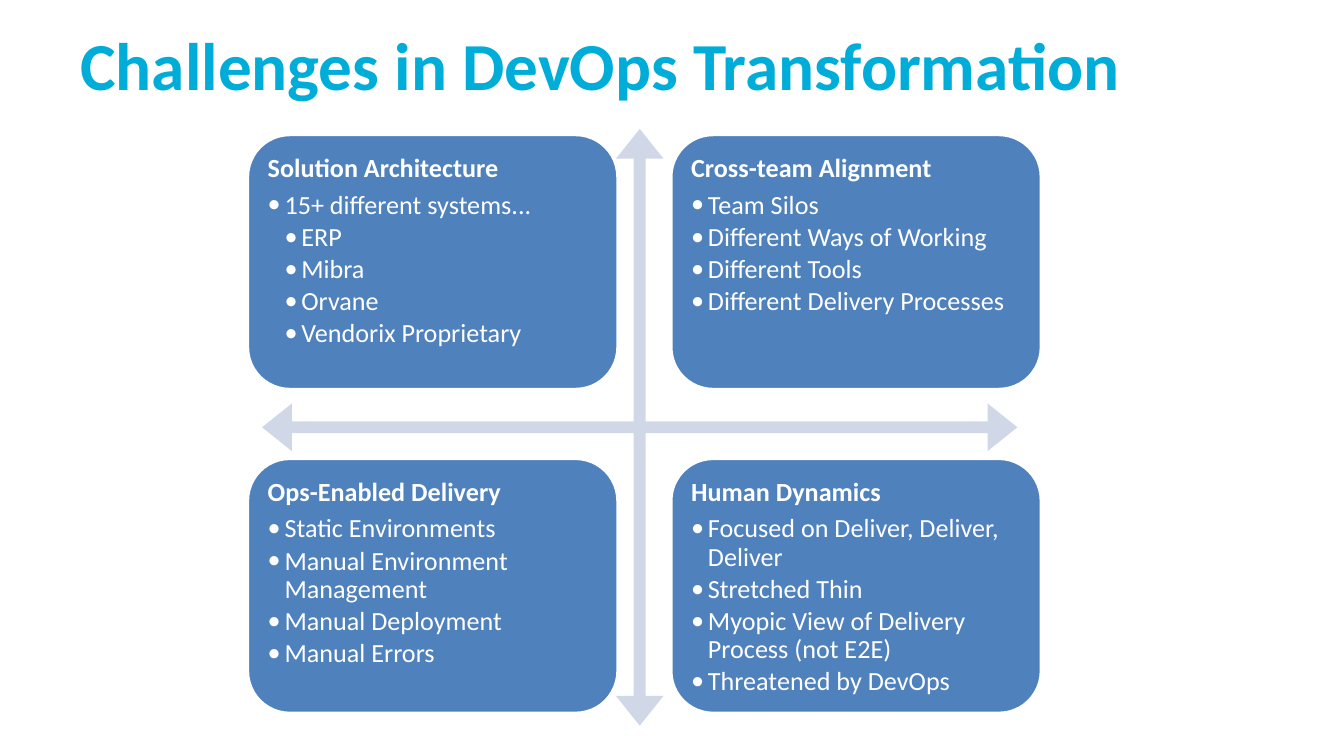
from lxml import etree
from pptx import Presentation
from pptx.dml.color import RGBColor
from pptx.enum.shapes import MSO_SHAPE as Shape
from pptx.enum.text import MSO_ANCHOR as Anchor, PP_ALIGN as Align
from pptx.oxml.ns import qn
from pptx.util import Inches, Pt

CYAN = RGBColor(0x00, 0xAD, 0xD8)
BLUE = RGBColor(0x4F, 0x81, 0xBD)
PALE_BLUE = RGBColor(0xD0, 0xD8, 0xE8)
WHITE = RGBColor(0xFF, 0xFF, 0xFF)
FONT = "Calibri"
INDENT = 0.125

# Heading and (level, text) bullets of each quadrant, row by row
QUADRANTS = [
    ("Solution Architecture", [
        (1, "15+ different systems..."),
        (2, "ERP"),
        (2, "Mibra"),
        (2, "Orvane"),
        (2, "Vendorix Proprietary"),
    ]),
    ("Cross-team Alignment", [
        (1, "Team Silos"),
        (1, "Different Ways of Working"),
        (1, "Different Tools"),
        (1, "Different Delivery Processes"),
    ]),
    ("Ops-Enabled Delivery", [
        (1, "Static Environments"),
        (1, "Manual Environment Management"),
        (1, "Manual Deployment"),
        (1, "Manual Errors"),
    ]),
    ("Human Dynamics", [
        (1, "Focused on Deliver, Deliver, Deliver"),
        (1, "Stretched Thin"),
        (1, "Myopic View of Delivery Process (not E2E)"),
        (1, "Threatened by DevOps"),
    ]),
]


def set_font(paragraph, size, color, bold=False):
    font = paragraph.font
    font.name, font.size, font.bold = FONT, Pt(size), bold
    font.color.rgb = color


def add_bullet(paragraph, level):
    paragraph.level = level
    properties = paragraph._p.get_or_add_pPr()
    properties.set("marL", str(Inches(INDENT * level)))
    properties.set("indent", str(-Inches(INDENT)))
    etree.SubElement(properties, qn("a:buFont"), typeface=FONT)
    etree.SubElement(properties, qn("a:buChar"), char="•")


def add_title(slide, left, top, width, height):
    title = slide.shapes.add_textbox(
        Inches(left), Inches(top), Inches(width), Inches(height))
    frame = title.text_frame
    frame.word_wrap = True
    frame.vertical_anchor = Anchor.MIDDLE
    frame.text = "Challenges in DevOps Transformation"
    set_font(frame.paragraphs[0], 36, CYAN, bold=True)


def add_quadrant(slide, left, top, width, height, heading, bullets):
    card = slide.shapes.add_shape(
        Shape.ROUNDED_RECTANGLE,
        Inches(left), Inches(top), Inches(width), Inches(height))
    card.shadow.inherit = False
    card.fill.solid()
    card.fill.fore_color.rgb = BLUE
    card.line.color.rgb = WHITE
    card.line.width = Pt(2)

    frame = card.text_frame
    frame.word_wrap = True
    frame.vertical_anchor = Anchor.TOP
    frame.margin_left = frame.margin_right = Inches(0.06)
    frame.margin_top = frame.margin_bottom = Inches(0.06)
    for index, (level, text) in enumerate([(0, heading)] + bullets):
        paragraph = frame.add_paragraph() if index else frame.paragraphs[0]
        paragraph.text = text
        paragraph.alignment = Align.LEFT
        paragraph.line_spacing = 0.9
        paragraph.space_after = Pt(2.1 if level else 4.5)
        if level:
            add_bullet(paragraph, level)
        set_font(paragraph, 14, WHITE, bold=not level)


def add_matrix(slide, left, top, width, height):
    # Crossed arrows behind the quadrants
    arrows = slide.shapes.add_shape(
        Shape.QUAD_ARROW, Inches(left + 0.11), Inches(top),
        Inches(5.62), Inches(height))
    arrows.shadow.inherit = False
    for index, ratio in enumerate((0.02, 0.04, 0.05)):
        arrows.adjustments[index] = ratio
    arrows.fill.solid()
    arrows.fill.fore_color.rgb = PALE_BLUE
    arrows.line.fill.background()

    # Two by two quadrants
    card_width, card_height = 2.76, 1.9
    column_step, row_step = width - card_width, 2.41
    for index, (heading, bullets) in enumerate(QUADRANTS):
        row, column = divmod(index, 2)
        add_quadrant(slide, left + column * column_step,
                     top + 0.04 + row * row_step,
                     card_width, card_height, heading, bullets)


def main():
    deck = Presentation()
    deck.slide_width = Inches(10)
    deck.slide_height = deck.slide_width * 9 // 16
    slide = deck.slides.add_slide(deck.slide_layouts[6])
    add_title(slide, 0.5, -0.01, 9, 0.97)
    add_matrix(slide, 1.84, 0.96, 5.91, 4.44)
    deck.save("out.pptx")


if __name__ == "__main__":
    main()
